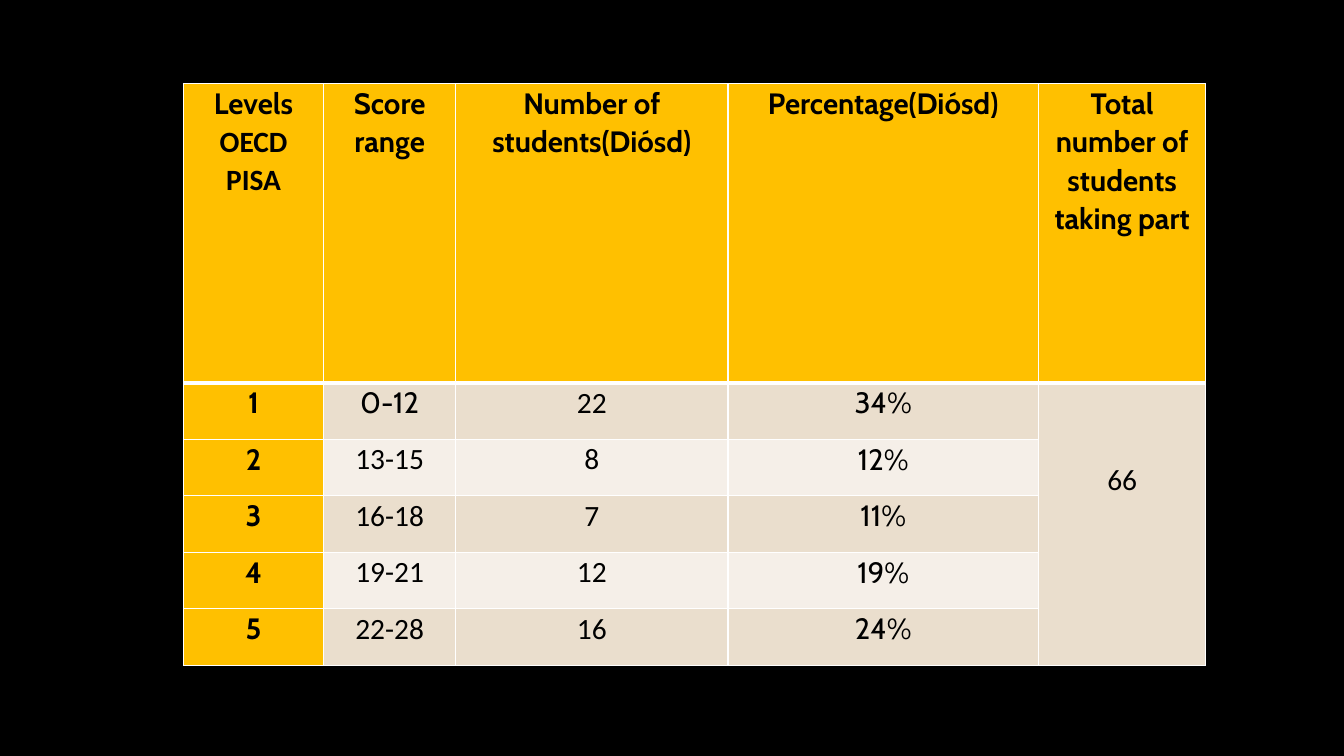
from dataclasses import dataclass

from lxml import etree
from pptx import Presentation
from pptx.dml.color import RGBColor
from pptx.enum.text import PP_ALIGN
from pptx.oxml.ns import qn
from pptx.util import Inches, Pt

# Content
HEADERS = [
    ["Levels", "OECD PISA"],
    ["Score range"],
    ["Number of students(Diósd)"],
    ["Percentage(Diósd)"],
    ["Total number of students taking part"],
]
LEVELS = [
    ("1", "0-12", "22", "34%"),
    ("2", "13-15", "8", "12%"),
    ("3", "16-18", "7", "11%"),
    ("4", "19-21", "12", "19%"),
    ("5", "22-28", "16", "24%"),
]
TOTAL = "66"
CALIBRI_TEXTS = {"OECD PISA", TOTAL}
CALIBRI_TEXTS.update(row[2] for row in LEVELS)
CALIBRI_TEXTS.update(row[1] for row in LEVELS[1:])

# Layout in inches
LEFT, TOP = 1.82, 0.83
COL_WIDTHS = [1.39, 1.31, 2.7, 3.08, 1.66]
HEADER_H, LEVEL_H = 2.97, 0.56
TOTAL_DROP = 0.76


@dataclass(frozen=True)
class Theme:
    background: str = "000000"
    text: str = "000000"
    accent: str = "FFC000"
    bands: tuple = ("EADECD", "F5EFE8")
    border: str = "FFFFFF"
    thin: float = 1
    thick: float = 3
    size: float = 21
    display: str = "Cabin"
    body: str = "Calibri"


THEME = Theme()


def write(cell, lines, bold, drop=0):
    cell.margin_left = cell.margin_right = Inches(0.11)
    cell.margin_top, cell.margin_bottom = Inches(drop), 0
    tf = cell.text_frame
    for i, line in enumerate(lines):
        p = tf.add_paragraph() if i else tf.paragraphs[0]
        p.alignment = PP_ALIGN.CENTER
        p.line_spacing = 1.07
        r = p.add_run()
        r.text = line
        r.font.name = THEME.body if line in CALIBRI_TEXTS else THEME.display
        r.font.size = Pt(THEME.size)
        r.font.bold = bold
        r.font.color.rgb = RGBColor.from_string(THEME.text)


def paint(cell, row, color):
    cell.fill.solid()
    cell.fill.fore_color.rgb = RGBColor.from_string(color)
    # Borders come before the fill in the cell properties
    widths = {"lnL": THEME.thin, "lnR": THEME.thin,
              "lnT": THEME.thick if row == 1 else THEME.thin,
              "lnB": THEME.thick if row == 0 else THEME.thin}
    props = cell._tc.get_or_add_tcPr()
    for i, (side, width) in enumerate(widths.items()):
        ln = etree.Element(qn(f"a:{side}"), w=str(Pt(width)))
        fill = etree.SubElement(ln, qn("a:solidFill"))
        etree.SubElement(fill, qn("a:srgbClr"), val=THEME.border)
        props.insert(i, ln)


def main():
    prs = Presentation()
    prs.slide_width, prs.slide_height = Inches(13.33), Inches(7.5)
    s = prs.slides.add_slide(prs.slide_layouts[6])
    s.background.fill.solid()
    s.background.fill.fore_color.rgb = RGBColor.from_string(THEME.background)

    # Table grid
    heights = [HEADER_H] + [LEVEL_H] * len(LEVELS)
    table = s.shapes.add_table(
        len(heights), len(COL_WIDTHS), Inches(LEFT), Inches(TOP),
        Inches(sum(COL_WIDTHS)), Inches(sum(heights))).table
    for column, width in zip(table.columns, COL_WIDTHS):
        column.width = Inches(width)
    for row, height in zip(table.rows, heights):
        row.height = Inches(height)

    # Fills and borders
    last = len(COL_WIDTHS) - 1
    for r in range(len(heights)):
        for c in range(len(COL_WIDTHS)):
            band = 0 if c == last else (r - 1) % 2
            color = THEME.accent if r == 0 or c == 0 else THEME.bands[band]
            paint(table.cell(r, c), r, color)

    # Header and level rows
    for c, lines in enumerate(HEADERS):
        write(table.cell(0, c), lines, bold=True)
    for r, level in enumerate(LEVELS, start=1):
        for c, value in enumerate(level):
            write(table.cell(r, c), [value], bold=c == 0)

    # Total across all levels
    total = table.cell(1, last)
    total.merge(table.cell(len(LEVELS), last))
    write(total, [TOTAL], bold=False, drop=TOTAL_DROP)

    prs.save("out.pptx")


if __name__ == "__main__":
    main()
